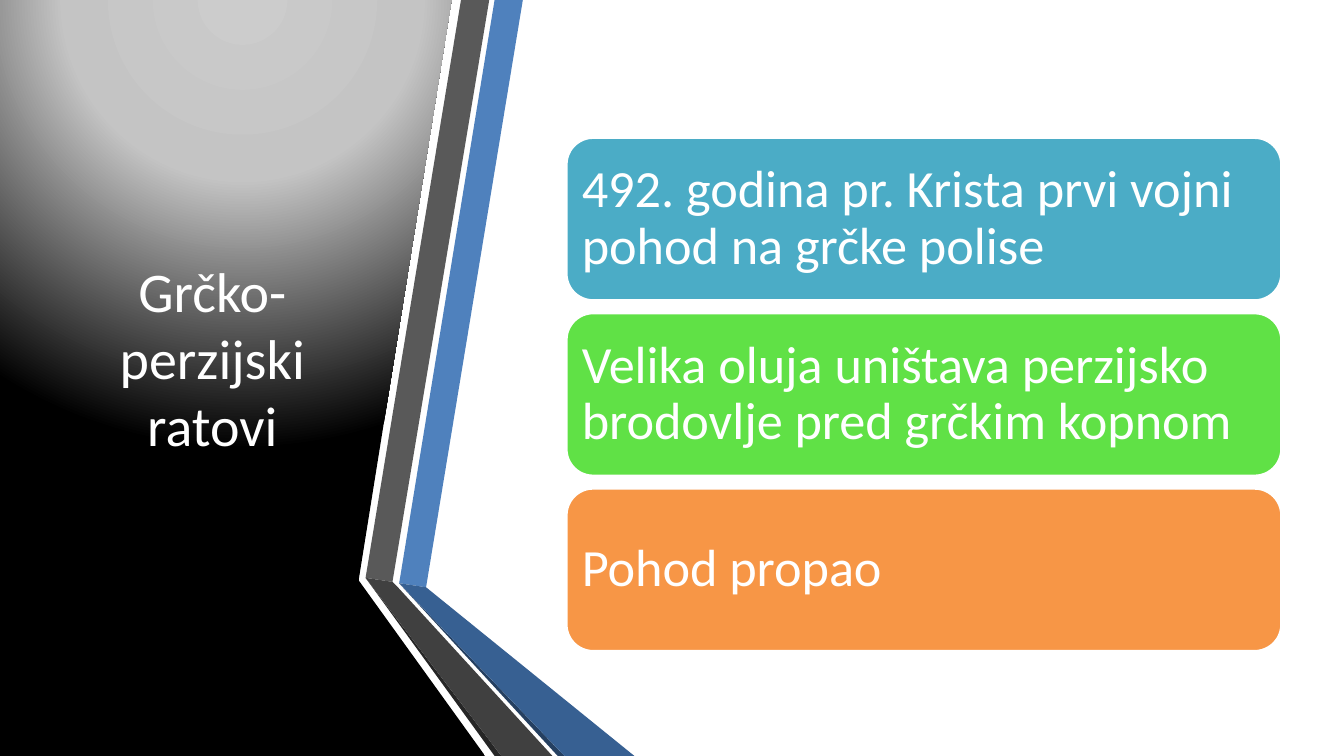
"""Builds a slide on the Greco-Persian wars with a folded ribbon and three event cards."""
from lxml.etree import SubElement
from pptx import Presentation
from pptx.dml.color import RGBColor
from pptx.enum.shapes import MSO_SHAPE as Shape
from pptx.enum.text import MSO_ANCHOR as Anchor, PP_ALIGN as Align
from pptx.oxml.ns import qn
from pptx.util import Inches, Pt

WIDTH = 10
HEIGHT = WIDTH * 9 / 16
FONT = "Calibri"
WHITE = RGBColor(0xFF, 0xFF, 0xFF)
BLACK = RGBColor(0x00, 0x00, 0x00)
SILVER = RGBColor(0xCC, 0xCC, 0xCC)
GRAY = RGBColor(0xC4, 0xC4, 0xC4)
SLATE = RGBColor(0x59, 0x59, 0x59)
CHARCOAL = RGBColor(0x40, 0x40, 0x40)
COAL = RGBColor(0x26, 0x26, 0x26)
BLUE = RGBColor(0x4F, 0x81, 0xBD)
DARK_BLUE = RGBColor(0x37, 0x60, 0x92)
NAVY = RGBColor(0x25, 0x40, 0x61)
TEAL = RGBColor(0x4B, 0xAC, 0xC6)
GREEN = RGBColor(0x60, 0xE1, 0x46)
ORANGE = RGBColor(0xF7, 0x96, 0x46)

PANEL = [(0, 0), (2.64, 0), (3.36, 0), (2.67, 4.31), (2.67, 4.32), (3.61, HEIGHT), (0, HEIGHT)]
PANEL_STOPS = [(0, SILVER), (40, GRAY), (100, BLACK)]
PANEL_FOCUS = {"l": 50, "t": -80, "r": 50, "b": 180}

GRAY_FOLD, GRAY_EDGE = (2.72, 4.3), (2.92, 4.33)
BLUE_FOLD, BLUE_EDGE = (2.97, 4.34), (3.17, 4.37)
RIBBONS = [
    (BLUE, [BLUE_FOLD, BLUE_EDGE, (3.89, 0), (3.68, 0)]),
    (SLATE, [(3.64, 0), (3.43, 0), GRAY_FOLD, GRAY_EDGE]),
    (COAL, [GRAY_FOLD, (3.68, HEIGHT), (3.73, HEIGHT)]),
    (NAVY, [BLUE_FOLD, (4.15, HEIGHT), (4.2, HEIGHT)]),
    (DARK_BLUE, [BLUE_FOLD, (4.2, HEIGHT), (4.72, HEIGHT), BLUE_EDGE]),
    (CHARCOAL, [(4.11, HEIGHT), (2.96, 4.37), GRAY_EDGE, GRAY_FOLD, (3.73, HEIGHT)]),
]

CARDS = [
    ("492. godina pr. Krista prvi vojni pohod na grčke polise", TEAL),
    ("Velika oluja uništava perzijsko brodovlje pred grčkim kopnom", GREEN),
    ("Pohod propao", ORANGE),
]
CARD_LEFT, CARD_TOP, CARD_WIDTH, CARD_HEIGHT = 4.21, 1.02, 5.33, 1.22
CARD_STEP = (3.63 - CARD_TOP) / 2


def write(frame, text, size, align=Align.LEFT, spacing=None, margin=None):
    """Fills a text frame with one formatted paragraph."""
    frame.word_wrap = True
    frame.vertical_anchor = Anchor.MIDDLE
    if margin is not None:
        frame.margin_left = frame.margin_right = Inches(margin)
        frame.margin_top = frame.margin_bottom = Inches(margin)
    paragraph = frame.paragraphs[0]
    paragraph.text = text
    paragraph.alignment = align
    paragraph.line_spacing = spacing
    paragraph.font.name = FONT
    paragraph.font.size = Pt(size)
    paragraph.font.color.rgb = WHITE


class SlideBuilder:
    """Holds the current slide and draws each kind of element on it."""

    def __init__(self, slide):
        self.shapes = slide.shapes

    def polygon(self, points, color):
        """Draws a closed outline without a border."""
        start, *rest = [(Inches(x), Inches(y)) for x, y in points]
        builder = self.shapes.build_freeform(*start)
        builder.add_line_segments(rest, close=True)
        shape = builder.convert_to_shape()
        shape.shadow.inherit = False
        shape.fill.solid()
        shape.fill.fore_color.rgb = color
        shape.line.fill.background()
        return shape

    def glow_polygon(self, points, stops, focus):
        """Draws a closed outline with a circular gradient."""
        shape = self.polygon(points, stops[-1][1])
        properties = shape._element.spPr
        solid = properties.find(qn("a:solidFill"))
        gradient = SubElement(properties, qn("a:gradFill"), rotWithShape="1")
        properties.replace(solid, gradient)
        stop_list = SubElement(gradient, qn("a:gsLst"))
        for position, color in stops:
            stop = SubElement(stop_list, qn("a:gs"), pos=str(position * 1000))
            SubElement(stop, qn("a:srgbClr"), val=str(color))
        circle = SubElement(gradient, qn("a:path"), path="circle")
        sides = {side: str(percent * 1000) for side, percent in focus.items()}
        SubElement(circle, qn("a:fillToRect"), sides)

    def title(self, text, left, top, width, height):
        """Adds the centred heading."""
        box = self.shapes.add_textbox(Inches(left), Inches(top), Inches(width), Inches(height))
        write(box.text_frame, text, size=30, align=Align.CENTER)

    def card(self, text, color, top):
        """Adds a rounded event card."""
        shape = self.shapes.add_shape(
            Shape.ROUNDED_RECTANGLE,
            Inches(CARD_LEFT), Inches(top), Inches(CARD_WIDTH), Inches(CARD_HEIGHT),
        )
        shape.shadow.inherit = False
        shape.fill.solid()
        shape.fill.fore_color.rgb = color
        shape.line.color.rgb = WHITE
        shape.line.width = Pt(2)
        write(shape.text_frame, text, size=28, spacing=0.9, margin=0.06)


def main():
    """Builds and saves the presentation."""
    presentation = Presentation()
    presentation.slide_width = Inches(WIDTH)
    presentation.slide_height = Inches(HEIGHT)
    builder = SlideBuilder(presentation.slides.add_slide(presentation.slide_layouts[6]))
    builder.glow_polygon(PANEL, PANEL_STOPS, PANEL_FOCUS)
    for color, points in RIBBONS:
        builder.polygon(points, color)
    builder.title("Grčko-perzijski ratovi", 0.44, 0.56, 2.28, 4.19)
    for index, (text, color) in enumerate(CARDS):
        builder.card(text, color, CARD_TOP + index * CARD_STEP)
    presentation.save("out.pptx")


if __name__ == "__main__":
    main()
